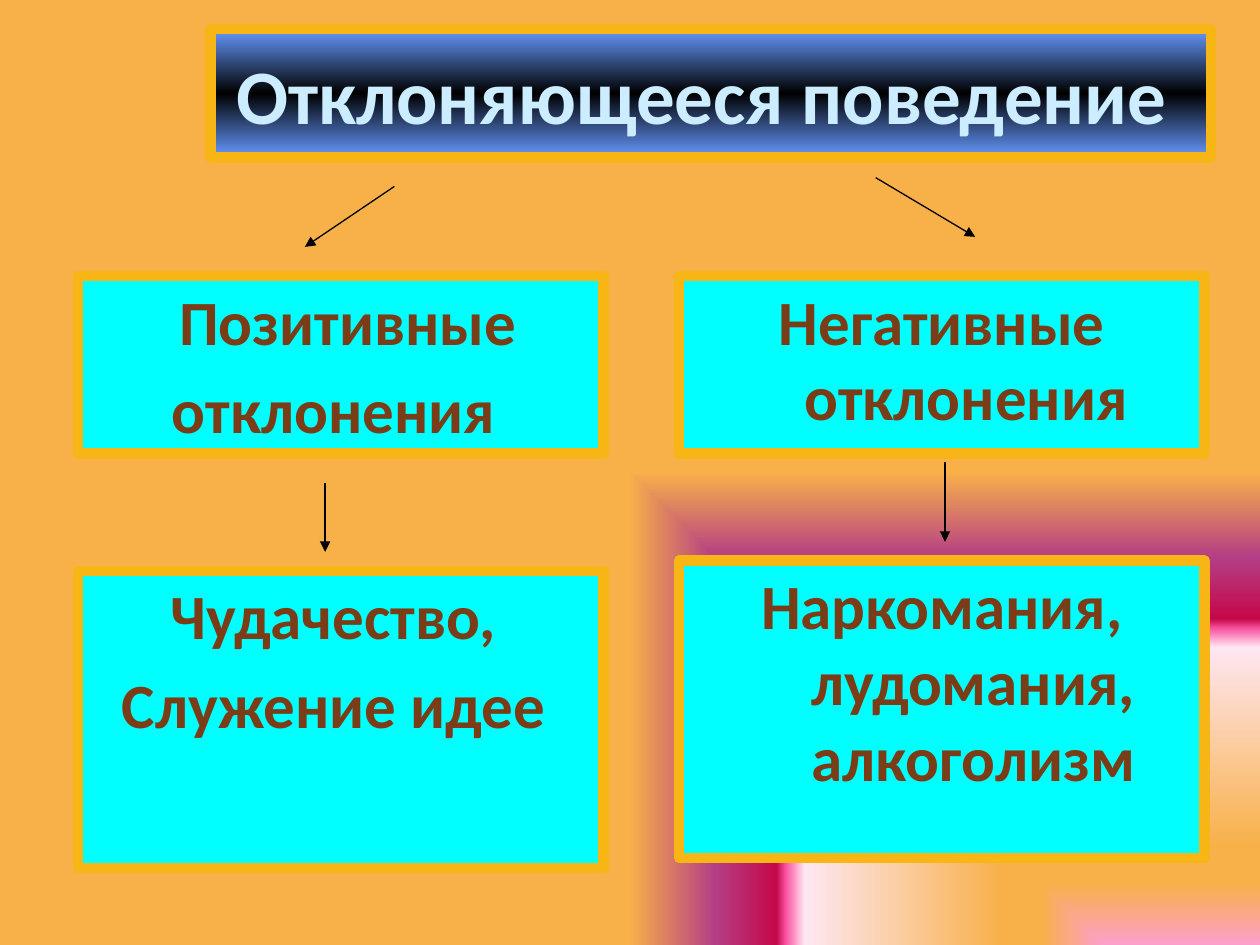
import dataclasses

import pptx
import pptx.dml.color
import pptx.enum.shapes
import pptx.enum.text
import pptx.oxml.ns
import pptx.util
from lxml import etree


@dataclasses.dataclass(frozen=True)
class Theme:
    font: str = "Calibri"
    title_size: int = 44
    box_size: int = 36
    border_width: float = 6
    arrow_width: float = 0.75
    paragraph_gap: float = 7.2
    hanging: float = 0.5
    title_text: str = "CCECFF"
    box_text: str = "7B3D17"
    box_fill: str = "00FFFF"
    border: str = "F7B615"
    arrow: str = "000000"
    title_stops: tuple = ((0, "6699FF"), (50, "000000"), (100, "6699FF"))
    backdrop_stops: tuple = (
        (0, "FC9FCB"), (13, "F8B049"), (21, "F8B049"), (63, "FEE7F2"),
        (67, "F952A0"), (69, "C50849"), (82, "B43E85"), (100, "F8B049"),
    )


def rgb(code):
    return pptx.dml.color.RGBColor.from_string(code)


def add_child(parent, tag, **attributes):
    return etree.SubElement(parent, pptx.oxml.ns.qn(tag), attributes)


class Diagram:
    def __init__(self, deck, theme):
        self.deck = deck
        self.theme = theme
        self.slide = deck.slides.add_slide(deck.slide_layouts[5])

    def across(self, percent):
        return round(self.deck.slide_width * percent / 100)

    def down(self, percent):
        return round(self.deck.slide_height * percent / 100)

    def area(self, left, top, width, height):
        return self.across(left), self.down(top), self.across(width), self.down(height)

    def gradient(self, fill, owner, stops):
        fill.gradient()
        gradient = owner.find(".//" + pptx.oxml.ns.qn("a:gradFill"))
        for child in list(gradient):
            gradient.remove(child)
        stop_list = add_child(gradient, "a:gsLst")
        for position, color in stops:
            stop = add_child(stop_list, "a:gs", pos=str(position * 1000))
            add_child(stop, "a:srgbClr", val=color)
        return gradient

    def backdrop(self):
        gradient = self.gradient(
            self.slide.background.fill, self.slide.element, self.theme.backdrop_stops)
        corner = add_child(gradient, "a:path", path="rect")
        add_child(corner, "a:fillToRect", l="100000", t="100000")

    def border(self, shape):
        shape.line.color.rgb = rgb(self.theme.border)
        shape.line.width = pptx.util.Pt(self.theme.border_width)

    def label(self, shape, lines, size, color, anchor):
        frame = shape.text_frame
        frame.text = "\n".join(lines)
        frame.word_wrap = True
        frame.auto_size = pptx.enum.text.MSO_AUTO_SIZE.NONE
        frame.vertical_anchor = anchor
        for paragraph in frame.paragraphs:
            paragraph.alignment = pptx.enum.text.PP_ALIGN.CENTER
            for run in paragraph.runs:
                run.font.name = self.theme.font
                run.font.size = pptx.util.Pt(size)
                run.font.bold = True
                run.font.color.rgb = rgb(color)
        return frame.paragraphs

    def title(self, text, left, top, width, height):
        heading = self.slide.shapes.title
        heading.left, heading.top, heading.width, heading.height = self.area(
            left, top, width, height)
        gradient = self.gradient(heading.fill, heading.element, self.theme.title_stops)
        add_child(gradient, "a:lin", ang="5400000", scaled="1")
        self.border(heading)
        self.label(heading, [text], self.theme.title_size, self.theme.title_text,
                   pptx.enum.text.MSO_ANCHOR.MIDDLE)

    def box(self, lines, left, top, width, height):
        panel = self.slide.shapes.add_shape(
            pptx.enum.shapes.MSO_SHAPE.RECTANGLE, *self.area(left, top, width, height))
        panel.shadow.inherit = False
        panel.fill.solid()
        panel.fill.fore_color.rgb = rgb(self.theme.box_fill)
        self.border(panel)
        paragraphs = self.label(panel, lines, self.theme.box_size, self.theme.box_text,
                                pptx.enum.text.MSO_ANCHOR.TOP)
        hanging = pptx.util.Inches(self.theme.hanging)
        for index, paragraph in enumerate(paragraphs):
            properties = paragraph._p.get_or_add_pPr()
            properties.set("marL", str(hanging))
            properties.set("indent", str(-hanging))
            if index:
                paragraph.space_before = pptx.util.Pt(self.theme.paragraph_gap)

    def arrow(self, start_x, start_y, end_x, end_y):
        link = self.slide.shapes.add_connector(
            pptx.enum.shapes.MSO_CONNECTOR.STRAIGHT,
            self.across(start_x), self.down(start_y),
            self.across(end_x), self.down(end_y))
        link.line.color.rgb = rgb(self.theme.arrow)
        link.line.width = pptx.util.Pt(self.theme.arrow_width)
        outline = link.element.spPr.find(pptx.oxml.ns.qn("a:ln"))
        add_child(outline, "a:tailEnd", type="triangle")
        add_child(link.element.spPr, "a:effectLst")


def main():
    deck = pptx.Presentation()
    deck.slide_width = pptx.util.Inches(10)
    deck.slide_height = pptx.util.Inches(7.5)

    diagram = Diagram(deck, Theme())
    diagram.backdrop()
    diagram.title("Отклоняющееся поведение ", 16.7, 3.07, 79.4, 13.6)

    positive, negative, box_width = 6.2, 53.9, 41.7
    kind_top, kind_height, example_height = 29.2, 18.8, 31.47
    branches = (
        (positive, [" Позитивные", "отклонения "],
         60.4, ["Чудачество, ", "Служение идее "]),
        (negative, ["Негативные отклонения "],
         59.33, ["Наркомания, лудомания, алкоголизм"]),
    )
    for left, kind, example_top, examples in branches:
        diagram.box(kind, left, kind_top, box_width, kind_height)
        diagram.box(examples, left, example_top, box_width, example_height)

    for route in (
        (31.3, 19.73, 24.2, 26.13),
        (69.5, 18.8, 77.4, 25.07),
        (25.8, 51.07, 25.8, 58.4),
        (75, 48.93, 75, 57.33),
    ):
        diagram.arrow(*route)

    deck.save("out.pptx")


if __name__ == "__main__":
    main()
